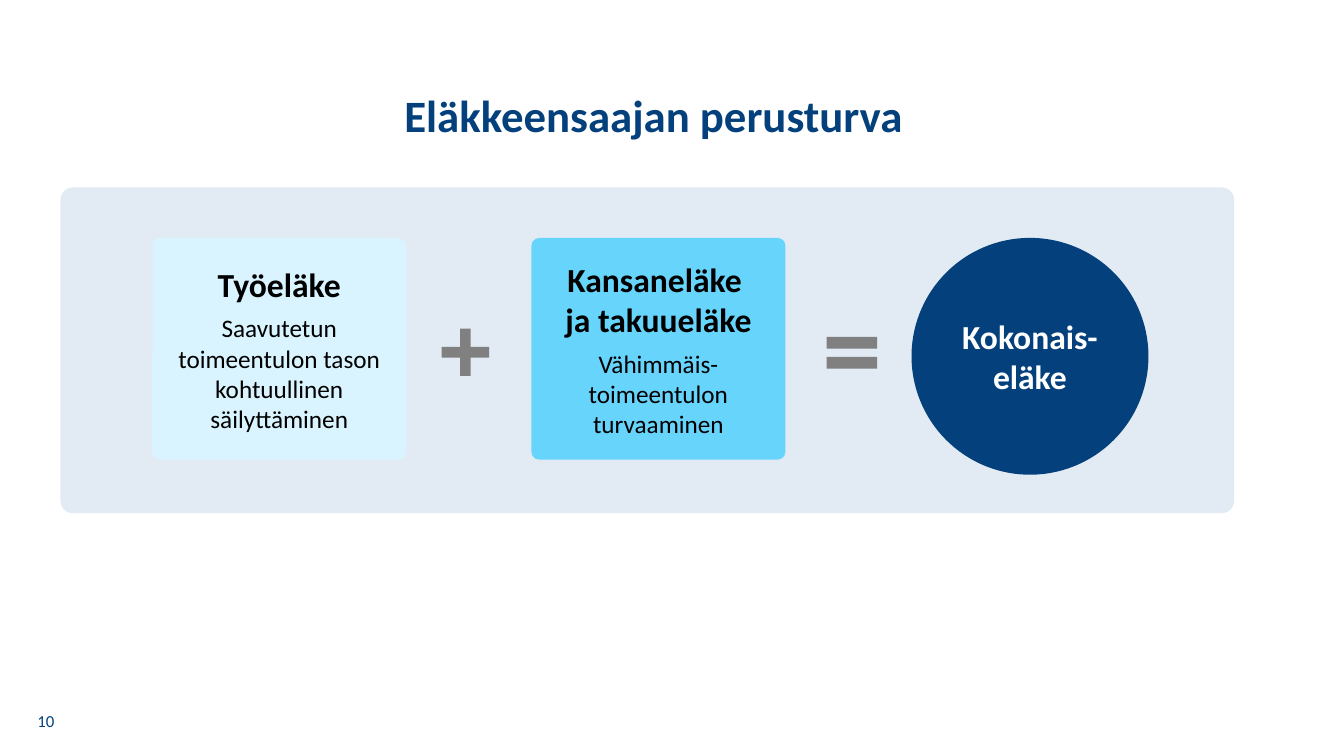
from pptx import Presentation
from pptx.dml.color import RGBColor
from pptx.enum.shapes import MSO_SHAPE as Kind
from pptx.enum.text import MSO_ANCHOR as Anchor, PP_ALIGN as Align
from pptx.util import Inches, Pt

NAVY = RGBColor(0x03, 0x40, 0x7C)
PANEL = RGBColor(0xE2, 0xEB, 0xF3)
PALE = RGBColor(0xD9, 0xF4, 0xFE)
SKY = RGBColor(0x67, 0xD4, 0xFC)
GREY = RGBColor(0x80, 0x80, 0x80)
BLACK = RGBColor(0, 0, 0)
WHITE = RGBColor(0xFF, 0xFF, 0xFF)

deck = Presentation()
deck.slide_width, deck.slide_height = Inches(13.33), Inches(7.5)
# One column and one row are a hundredth of the slide
COL, ROW = deck.slide_width / 100, deck.slide_height / 100
slide = deck.slides.add_slide(deck.slide_layouts[5])
group = slide.shapes.add_group_shape()


def write(frame, text, size=24, color=BLACK, bold=True, after=0, lead=1.0):
    para = frame.paragraphs[0]
    if para.runs:
        para = frame.add_paragraph()
    para.text = text
    para.alignment = Align.CENTER
    para.space_after, para.line_spacing = Pt(after), lead
    for run in para.runs:
        font = run.font
        font.name, font.size, font.bold = "Calibri", Pt(size), bold
        font.color.rgb = color


def draw(kind, x, y, wide, high, fill, *adjust):
    shape = group.shapes.add_shape(
        kind, int(x * COL), int(y * ROW), int(wide * COL), int(high * ROW))
    shape.shadow.inherit = False
    shape.fill.solid()
    shape.fill.fore_color.rgb = fill
    shape.line.fill.background()
    for i, value in enumerate(adjust):
        shape.adjustments[i] = value
    shape.text_frame.vertical_anchor = Anchor.MIDDLE
    return shape.text_frame


# Title
title = slide.shapes.title
title.left, title.top = 0, int(11.73 * ROW)
title.width, title.height = int(97.3 * COL), int(12.27 * ROW)
title.text_frame.vertical_anchor = Anchor.TOP
write(title.text_frame, "Eläkkeensaajan perusturva", size=32, color=NAVY, lead=0.9)

# Background panel
draw(Kind.ROUNDED_RECTANGLE, 4.5, 24.8, 87.32, 43.07, PANEL, 0.037)

# The two pensions
TOP = 31.47
pensions = [
    ("Työeläke", "Saavutetun toimeentulon tason kohtuullinen säilyttäminen", PALE),
    ("Kansaneläke \vja takuueläke", "Vähimmäis-toimeentulon turvaaminen", SKY),
]
for i, (name, goal, fill) in enumerate(pensions):
    frame = draw(Kind.ROUNDED_RECTANGLE, 11.33 + 28.21 * i, TOP, 18.9, 29.33, fill, 0.035)
    write(frame, name, after=6)
    write(frame, goal, size=18, bold=False)

# Their sum
frame = draw(Kind.OVAL, 67.82, TOP, 17.63, 31.33, NAVY)
for part in ("Kokonais-", "eläke"):
    write(frame, part, color=WHITE)

# Plus and equals signs
draw(Kind.CROSS, 32.86, 43.47, 3.53, 6.27, GREY, 0.388)
draw(Kind.MATH_EQUAL, 60.84, 42.13, 5.1, 9.07, GREY, 0.172, 0.118)

# Slide number
box = slide.shapes.add_textbox(
    int(1.5 * COL), int(92.67 * ROW), int(3.83 * COL), int(5.33 * ROW))
box.text_frame.word_wrap = True
box.text_frame.vertical_anchor = Anchor.MIDDLE
write(box.text_frame, "10", size=12, color=NAVY, bold=False)

deck.save("out.pptx")
